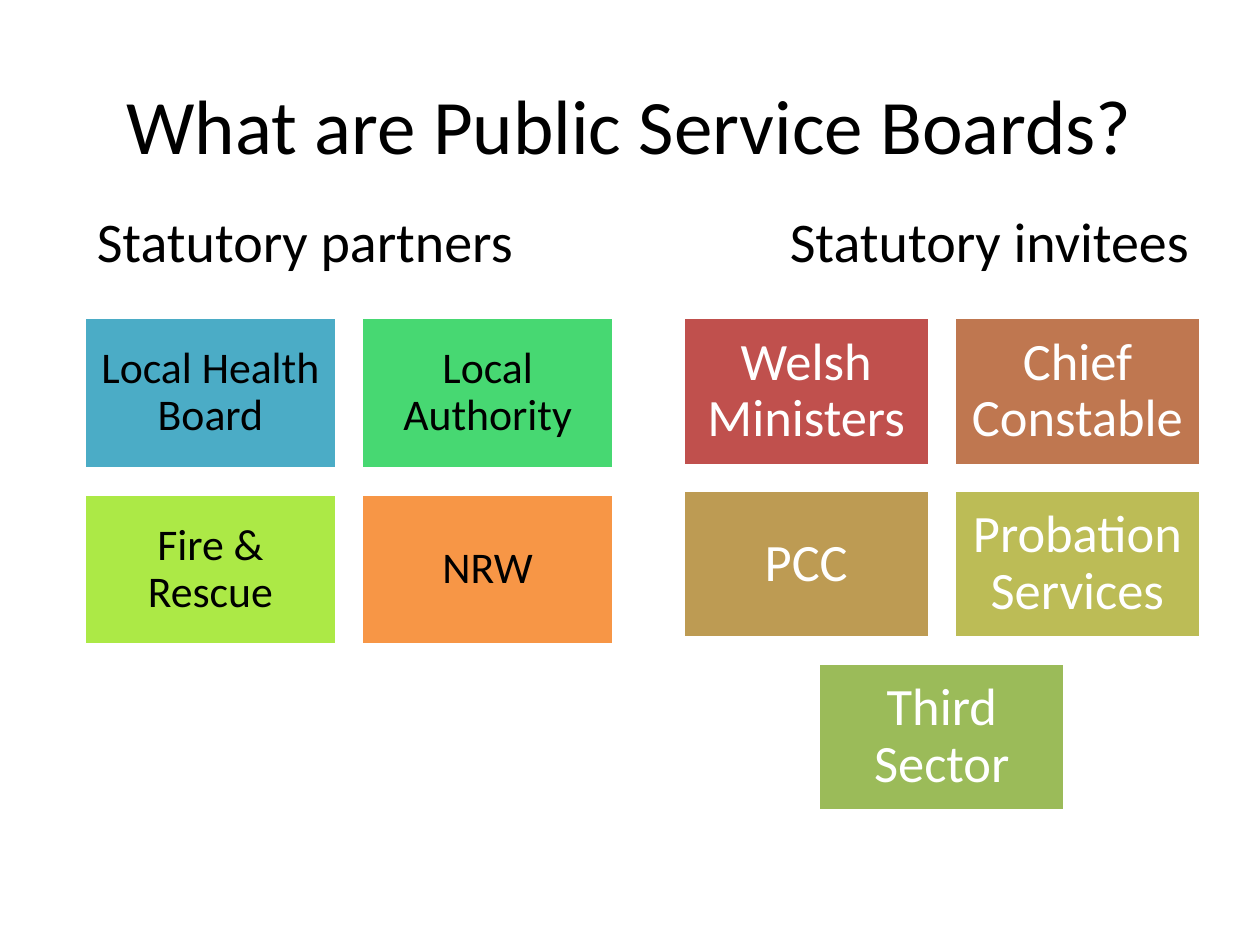
import pptx
import pptx.util
import pptx.dml.color
import pptx.enum.shapes
import pptx.enum.text

Inches = pptx.util.Inches
Pt = pptx.util.Pt
RGBColor = pptx.dml.color.RGBColor
PP_ALIGN = pptx.enum.text.PP_ALIGN
MSO_ANCHOR = pptx.enum.text.MSO_ANCHOR

BLACK = RGBColor(0x00, 0x00, 0x00)
WHITE = RGBColor(0xFF, 0xFF, 0xFF)
BLUE = RGBColor(0x4B, 0xAC, 0xC6)
MINT = RGBColor(0x47, 0xD8, 0x72)
LIME = RGBColor(0xAC, 0xE9, 0x46)
ORANGE = RGBColor(0xF7, 0x96, 0x46)
RED = RGBColor(0xC0, 0x50, 0x4D)
COPPER = RGBColor(0xBF, 0x77, 0x50)
OCHRE = RGBColor(0xBD, 0x9B, 0x53)
OLIVE = RGBColor(0xBC, 0xBC, 0x56)
GREEN = RGBColor(0x9B, 0xBB, 0x59)

PARTNERS = [
    ("Local Health Board", BLUE),
    ("Local Authority", MINT),
    ("Fire & Rescue", LIME),
    ("NRW", ORANGE),
]
INVITEES = [
    ("Welsh Ministers", RED),
    ("Chief Constable", COPPER),
    ("PCC", OCHRE),
    ("Probation Services", OLIVE),
    ("Third Sector", GREEN),
]


def write_text(sp, text, size, color=BLACK, align=PP_ALIGN.CENTER,
               anchor=MSO_ANCHOR.MIDDLE, spacing=None, inset=None):
    tf = sp.text_frame
    tf.word_wrap = True
    tf.vertical_anchor = anchor
    if inset is not None:
        tf.margin_left = tf.margin_right = Inches(inset)
        tf.margin_top = tf.margin_bottom = Inches(inset)
    p = tf.paragraphs[0]
    p.alignment = align
    if spacing is not None:
        p.line_spacing = spacing
    r = p.add_run()
    r.text = text
    r.font.name = "Calibri"
    r.font.size = Pt(size)
    r.font.color.rgb = color


def add_text(s, text, left, top, width, height, **fmt):
    sp = s.shapes.add_textbox(Inches(left), Inches(top), Inches(width), Inches(height))
    write_text(sp, text, **fmt)


def add_tile(s, text, fill, left, top, width, height, **fmt):
    sp = s.shapes.add_shape(
        pptx.enum.shapes.MSO_SHAPE.RECTANGLE,
        Inches(left), Inches(top), Inches(width), Inches(height))
    sp.shadow.inherit = False
    sp.fill.solid()
    sp.fill.fore_color.rgb = fill
    sp.line.color.rgb = WHITE
    sp.line.width = Pt(2)
    write_text(sp, text, spacing=0.9, **fmt)


def add_tile_grid(s, tiles, left, top, width, columns=2, **fmt):
    tile_w = width / (columns + 0.1 * (columns - 1))
    tile_h = 0.6 * tile_w
    gap = 0.1 * tile_w
    for start in range(0, len(tiles), columns):
        row = tiles[start:start + columns]
        row_w = len(row) * tile_w + (len(row) - 1) * gap
        x = left + (width - row_w) / 2
        y = top + start // columns * (tile_h + gap)
        for i, (text, fill) in enumerate(row):
            add_tile(s, text, fill, x + i * (tile_w + gap), y, tile_w, tile_h, **fmt)


def add_heading(s, text, left, top, width, height):
    add_text(s, text, left, top, width, height, size=32,
             align=PP_ALIGN.LEFT, anchor=MSO_ANCHOR.TOP)


def main():
    prs = pptx.Presentation()
    prs.slide_width = Inches(10)
    prs.slide_height = Inches(7.5)
    s = prs.slides.add_slide(prs.slide_layouts[6])

    add_text(s, "What are Public Service Boards?", 0.5, 0.36, 9, 1.25, size=44)
    add_heading(s, "Statutory partners", 0.67, 1.59, 4.2, 0.65)
    add_heading(s, "Statutory invitees", 6.17, 1.59, 3.5, 0.65)
    add_tile_grid(s, PARTNERS, 0.67, 2.52, 4.2, size=25, inset=0.1)
    add_tile_grid(s, INVITEES, 5.42, 2.52, 4.11, size=30, color=WHITE, inset=0.12)

    prs.save("out.pptx")


if __name__ == "__main__":
    main()
